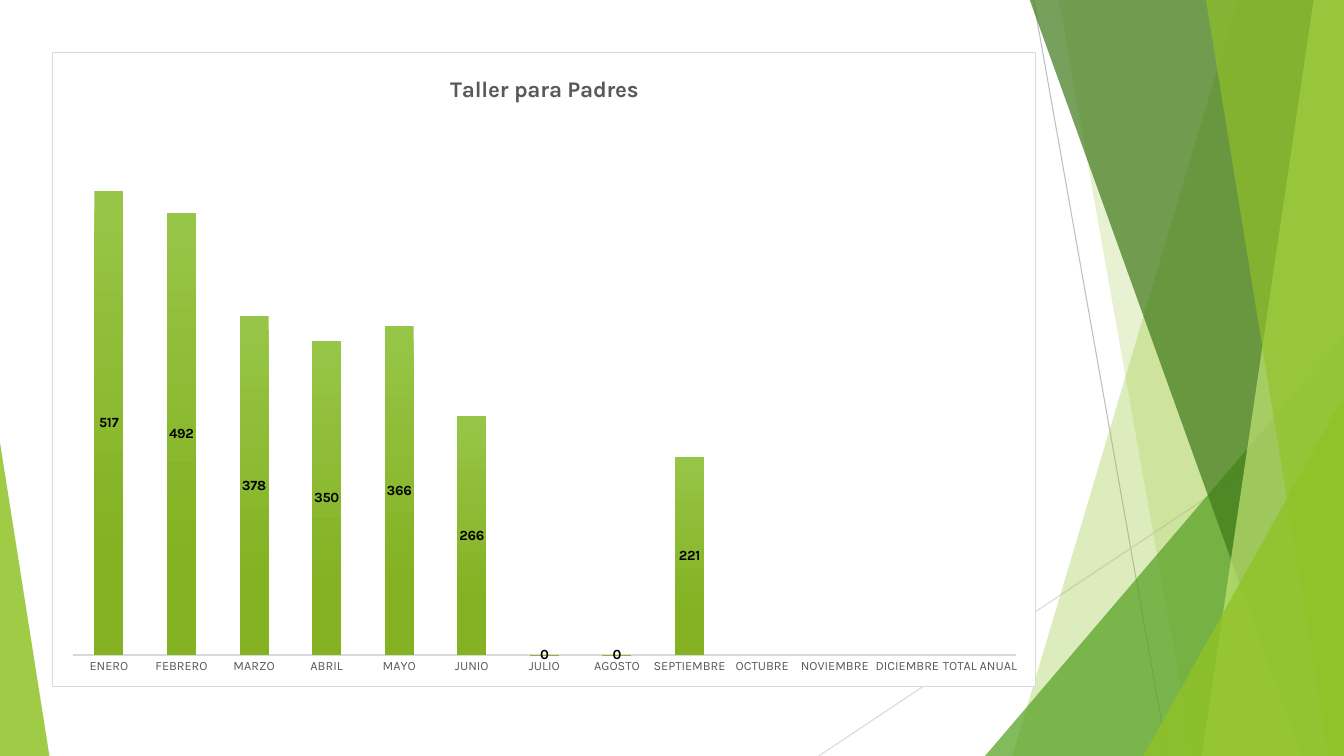
from lxml import etree
from pptx import Presentation
from pptx import util as u
from pptx.chart.data import CategoryChartData
from pptx.dml.color import RGBColor
from pptx.enum import chart as charts, shapes
from pptx.oxml import parse_xml
from pptx.oxml.ns import nsdecls, qn

WIDTH, HEIGHT = 13.33, 7.5
TOP = -0.01
LIME, GREEN, FOREST, PALE = "90C226", "54A021", "3F7819", "C0E474"
GRAY, RULE = "595959", "D9D9D9"
MONTHS = ["ENERO", "FEBRERO", "MARZO", "ABRIL", "MAYO", "JUNIO", "JULIO", "AGOSTO",
          "SEPTIEMBRE", "OCTUBRE", "NOVIEMBRE", "DICIEMBRE", "TOTAL ANUAL"]
ATTENDANCE = [517, 492, 378, 350, 366, 266, 0, 0, 221, None, None, None, None]


def color(value):
    return RGBColor.from_string(value)


class SlideBuilder:
    font = "Karla"

    def __init__(self, slide):
        self.slide = slide

    def style_font(self, font, size, value, bold=False):
        font.name, font.size, font.bold = self.font, u.Pt(size), bold
        font.color.rgb = color(value)

    def paint(self, shape, fill, opacity):
        shape.shadow.inherit = False
        shape.line.fill.background()
        shape.fill.solid()
        shape.fill.fore_color.rgb = color(fill)
        tone = shape.fill._xPr.find(".//" + qn("a:srgbClr"))
        etree.SubElement(tone, qn("a:alpha"), val=str(opacity * 1000))

    def line(self, start, end, value):
        ends = [u.Inches(number) for number in (*start, *end)]
        connector = self.slide.shapes.add_connector(shapes.MSO_CONNECTOR.STRAIGHT, *ends)
        connector.line.color.rgb = color(value)
        connector.line.width = u.Pt(0.75)
        etree.SubElement(connector._element.spPr, qn("a:effectLst"))

    def band(self, top_left, bottom_left, fill, opacity):
        """Fill from a slanted left edge to the right side of the slide."""
        corners = [(top_left, TOP), (WIDTH, TOP), (WIDTH, HEIGHT), (bottom_left, HEIGHT)]
        points = [(u.Inches(x), u.Inches(y)) for x, y in corners]
        builder = self.slide.shapes.build_freeform(*points[0])
        builder.add_line_segments(points[1:], close=True)
        self.paint(builder.convert_to_shape(), fill, opacity)

    def triangle(self, left, top, width, apex, fill, opacity):
        """Stand a triangle on the bottom edge of the slide."""
        box = [u.Inches(number) for number in (left, top, width, HEIGHT - top)]
        shape = self.slide.shapes.add_shape(shapes.MSO_SHAPE.ISOSCELES_TRIANGLE, *box)
        shape.adjustments[0] = apex
        self.paint(shape, fill, opacity)

    def column_chart(self, box, title, categories, values):
        data = CategoryChartData()
        data.categories = categories
        data.add_series("Series 1", values)
        chart = self.slide.shapes.add_chart(
            charts.XL_CHART_TYPE.COLUMN_STACKED, *[u.Inches(n) for n in box], data).chart
        self.style_font(chart.font, 10, "000000")
        chart.has_legend = False

        # Title
        chart.has_title = True
        frame = chart.chart_title.text_frame
        frame.text = title
        self.style_font(frame.paragraphs[0].runs[0].font, 16, GRAY, bold=True)

        # Axes
        months = chart.category_axis
        months.major_tick_mark = charts.XL_TICK_MARK.NONE
        months.format.line.color.rgb = color(RULE)
        months.format.line.width = u.Pt(1)
        self.style_font(months.tick_labels.font, 9, GRAY)
        amounts = chart.value_axis
        amounts.minimum_scale, amounts.maximum_scale = 0, 600
        amounts.has_major_gridlines = False
        amounts.visible = False

        # Columns
        plot = chart.plots[0]
        plot.gap_width, plot.overlap = 150, 100
        plot.vary_by_categories = False
        fill = plot.series[0].format.fill
        fill.gradient()
        fill.gradient_angle = 270
        for stop, (position, value) in zip(fill.gradient_stops, [(0, "97C547"), (0.78, "84B223")]):
            stop.position = position
            stop.color.rgb = color(value)

        # Value labels
        labels = plot.series[0].data_labels
        labels.show_value = True
        labels.position = charts.XL_LABEL_POSITION.CENTER
        self.style_font(labels.font, 10, "000000", bold=True)

        self.frame_chart(chart, (0.02, 0.1, 0.96, 0.85))

    def frame_chart(self, chart, plot_box):
        """Place the plot area and give the chart its background and border."""
        area = chart._chartSpace.find(".//" + qn("c:plotArea"))
        for layout in area.findall(qn("c:layout")):
            area.remove(layout)
        places = "".join(f'<c:{tag} val="{n}"/>' for tag, n in zip("xywh", plot_box))
        area.insert(0, parse_xml(
            f'<c:layout {nsdecls("c")}><c:manualLayout><c:layoutTarget val="inner"/>'
            f'<c:xMode val="edge"/><c:yMode val="edge"/>{places}</c:manualLayout></c:layout>'))
        chart._chartSpace.find(qn("c:chart")).addnext(parse_xml(
            f'<c:spPr {nsdecls("c", "a")}><a:solidFill><a:srgbClr val="FFFFFF"/></a:solidFill>'
            f'<a:ln w="{u.Pt(0.75)}"><a:solidFill><a:srgbClr val="{RULE}"/></a:solidFill></a:ln>'
            '</c:spPr>'))


def main():
    presentation = Presentation()
    presentation.slide_width = u.Inches(WIDTH)
    presentation.slide_height = u.Inches(HEIGHT)
    builder = SlideBuilder(presentation.slides.add_slide(presentation.slide_layouts[6]))

    # Green facets
    builder.line((10.25, 0), (11.58, HEIGHT), "BFBFBF")
    builder.line((WIDTH, 4.03), (8.12, HEIGHT), RULE)
    builder.band(12.28, 10.04, LIME, 30)
    builder.band(10.5, 11.83, LIME, 20)
    builder.triangle(9.77, 3.33, 3.56, 1, GREEN, 72)
    builder.band(10.21, 12.91, FOREST, 70)
    builder.band(13.03, 11.92, PALE, 70)
    builder.band(11.96, 13.18, LIME, 65)
    builder.triangle(11.34, 3.93, 1.99, 1, LIME, 80)
    builder.triangle(0, 4.39, 0.49, 0, LIME, 85)

    # Monthly attendance
    builder.column_chart((0.52, 0.52, 9.76, 6.3), "Taller para Padres", MONTHS, ATTENDANCE)

    presentation.save("out.pptx")


if __name__ == "__main__":
    main()
